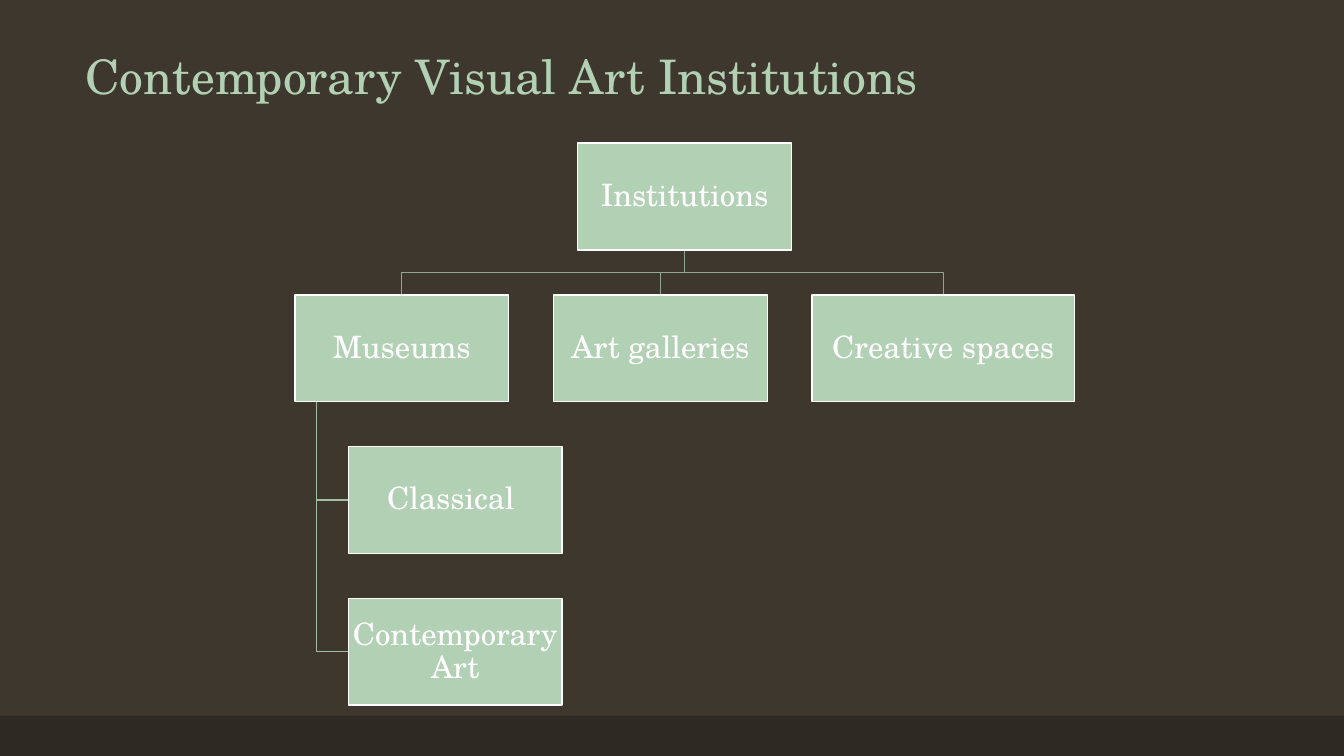
from pptx import Presentation, util as u
from pptx.dml.color import RGBColor
from pptx.enum import shapes, text

BACKGROUND = RGBColor(0x3D, 0x37, 0x2E)
FOOTER = RGBColor(0x2E, 0x29, 0x23)
MINT = RGBColor(0xB2, 0xD0, 0xB4)
UPPER_LINE = RGBColor(0x8F, 0xA7, 0x90)
LOWER_LINE = RGBColor(0xA2, 0xBD, 0xA3)
WHITE = RGBColor(0xFF, 0xFF, 0xFF)
FONT = "TeX Gyre Schola"

# Grid of the chart, in inches
WIDTH, HEIGHT = 13.33, 7.5
BOX_WIDTH, WIDE_BOX, BOX_HEIGHT = 2.12, 2.6, 1.06
GAP = 0.21 * BOX_WIDTH
CENTER, TOP = 6.79, 1.42
LEFT = CENTER - (2 * BOX_WIDTH + WIDE_BOX + 2 * GAP) / 2
COLUMNS = [LEFT + column * (BOX_WIDTH + GAP) for column in range(3)]
ROWS = [TOP + row * (BOX_HEIGHT + GAP) for row in range(4)]
INDENTED = LEFT + BOX_WIDTH / 4
TRUNK = LEFT + BOX_WIDTH / 10

presentation = Presentation()
presentation.slide_width = u.Inches(WIDTH)
presentation.slide_height = u.Inches(HEIGHT)
slide = presentation.slides.add_slide(presentation.slide_layouts[6])
slide.background.fill.solid()
slide.background.fill.fore_color.rgb = BACKGROUND


def add_line(points, color):
    """Draw an open line through points given in inches."""
    corners = [(u.Inches(x), u.Inches(y)) for x, y in points]
    builder = slide.shapes.build_freeform(*corners[0])
    builder.add_line_segments(corners[1:], close=False)
    shape = builder.convert_to_shape()
    shape.shadow.inherit = False
    shape.fill.background()
    shape.line.color.rgb = color
    shape.line.width = u.Pt(1)


def add_text(shape, words, size, color, alignment, anchor):
    frame = shape.text_frame
    frame.word_wrap = True
    frame.vertical_anchor = anchor
    paragraph = frame.paragraphs[0]
    paragraph.alignment = alignment
    paragraph.line_spacing = 0.9
    run = paragraph.add_run()
    run.text = words
    run.font.name = FONT
    run.font.size = u.Pt(size)
    run.font.color.rgb = color
    return frame


footer = slide.shapes.add_shape(
    shapes.MSO_SHAPE.RECTANGLE, 0, u.Inches(7.1), u.Inches(WIDTH), u.Inches(0.4))
footer.shadow.inherit = False
footer.fill.solid()
footer.fill.fore_color.rgb = FOOTER
footer.line.fill.background()

title = slide.shapes.add_textbox(
    u.Inches(0.75), u.Inches(-0.16), u.Inches(12.58), u.Inches(1.25))
add_text(title, "Contemporary Visual Art Institutions", 34, MINT,
         text.PP_ALIGN.LEFT, text.MSO_ANCHOR.BOTTOM)

# Lines from the root to the second level
root_bottom = ROWS[0] + BOX_HEIGHT
branch = root_bottom + GAP / 2
for left, width in zip(COLUMNS, (BOX_WIDTH, BOX_WIDTH, WIDE_BOX)):
    middle = left + width / 2
    add_line([(CENTER, root_bottom), (CENTER, branch),
              (middle, branch), (middle, ROWS[1])], UPPER_LINE)

# Lines from Museums to its two kinds
for top in ROWS[2:]:
    middle = top + BOX_HEIGHT / 2
    add_line([(TRUNK, ROWS[1] + BOX_HEIGHT), (TRUNK, middle),
              (INDENTED, middle)], LOWER_LINE)

boxes = [
    ("Institutions", CENTER - BOX_WIDTH / 2, ROWS[0], BOX_WIDTH),
    ("Museums", COLUMNS[0], ROWS[1], BOX_WIDTH),
    ("Classical ", INDENTED, ROWS[2], BOX_WIDTH),
    ("Contemporary Art", INDENTED, ROWS[3], BOX_WIDTH),
    ("Art galleries", COLUMNS[1], ROWS[1], BOX_WIDTH),
    ("Creative spaces", COLUMNS[2], ROWS[1], WIDE_BOX),
]
for words, left, top, width in boxes:
    box = slide.shapes.add_shape(
        shapes.MSO_SHAPE.RECTANGLE, u.Inches(left), u.Inches(top),
        u.Inches(width), u.Inches(BOX_HEIGHT))
    box.shadow.inherit = False
    box.fill.solid()
    box.fill.fore_color.rgb = MINT
    box.line.color.rgb = WHITE
    box.line.width = u.Pt(1)
    frame = add_text(box, words, 22, WHITE,
                     text.PP_ALIGN.CENTER, text.MSO_ANCHOR.MIDDLE)
    frame.margin_left = frame.margin_right = u.Inches(0.02)
    frame.margin_top = frame.margin_bottom = u.Inches(0.02)

presentation.save("out.pptx")
